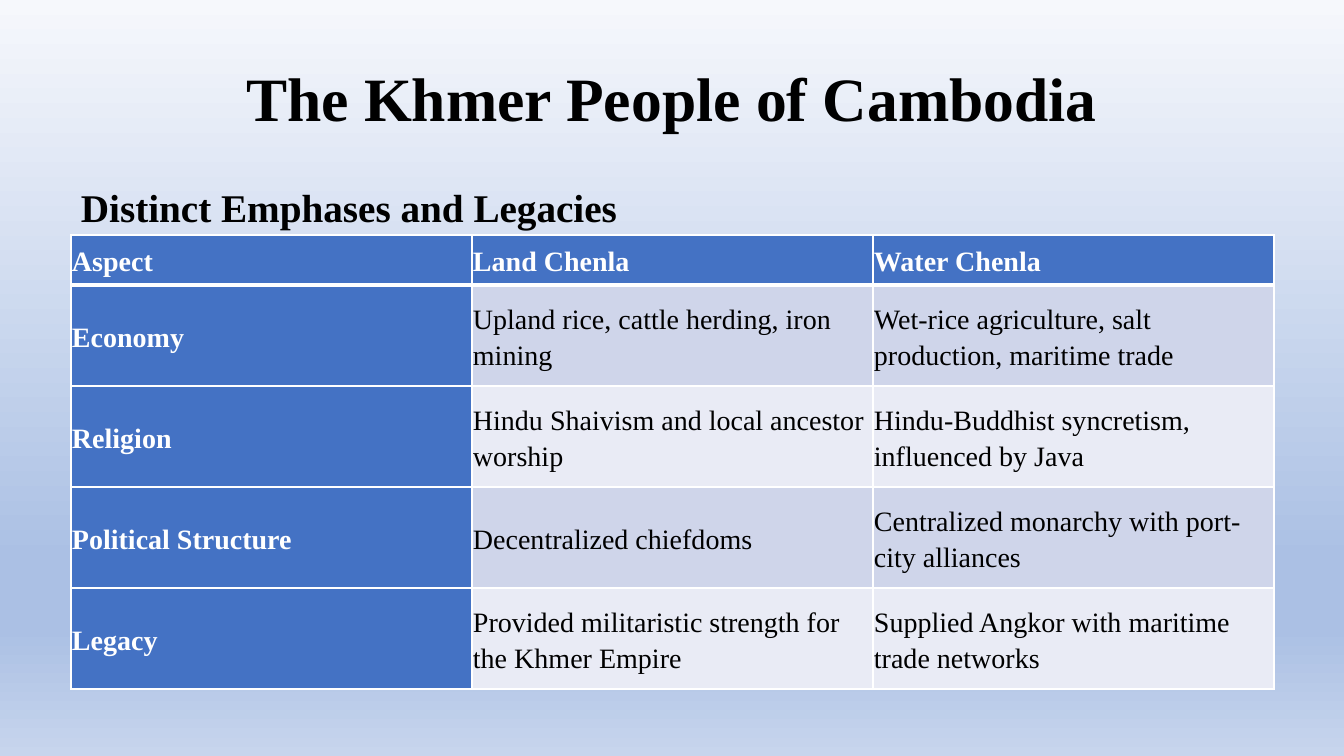
import pptx
import pptx.dml.color
import pptx.enum.text
import pptx.oxml
import pptx.oxml.ns
import pptx.util

RGBColor = pptx.dml.color.RGBColor
PP_ALIGN = pptx.enum.text.PP_ALIGN
MIDDLE = pptx.enum.text.MSO_ANCHOR.MIDDLE
AUTO_SIZE = pptx.enum.text.MSO_AUTO_SIZE

BLACK = RGBColor(0x00, 0x00, 0x00)
WHITE = RGBColor(0xFF, 0xFF, 0xFF)
BLUE = RGBColor(0x44, 0x72, 0xC4)
BANDS = [RGBColor(0xCF, 0xD5, 0xEA), RGBColor(0xE9, 0xEB, 0xF5)]
SKY = [
    (0, RGBColor(0xF6, 0xF8, 0xFC)),
    (74, RGBColor(0xAB, 0xC0, 0xE4)),
    (83, RGBColor(0xAB, 0xC0, 0xE4)),
    (100, RGBColor(0xC7, 0xD5, 0xED)),
]
PX = 914400 / 100.8
NS = pptx.oxml.ns.nsdecls("a")

ROWS = [
    ("Aspect", "Land Chenla", "Water Chenla"),
    ("Economy", "Upland rice, cattle herding, iron mining",
     "Wet-rice agriculture, salt production, maritime trade"),
    ("Religion", "Hindu Shaivism and local ancestor worship",
     "Hindu-Buddhist syncretism, influenced by Java"),
    ("Political Structure", "Decentralized chiefdoms",
     "Centralized monarchy with port-city alliances"),
    ("Legacy", "Provided militaristic strength for the Khmer Empire",
     "Supplied Angkor with maritime trade networks"),
]


def px(*lengths):
    return [pptx.util.Emu(round(n * PX)) for n in lengths]


def write(tf, text, size, color=BLACK, bold=True, align=PP_ALIGN.LEFT,
          line=None, after=None):
    p = tf.paragraphs[0]
    p.alignment = align
    p.line_spacing = line
    p.space_after = after
    r = p.add_run()
    r.text = text
    r.font.name = "Times New Roman"
    r.font.size = pptx.util.Pt(size)
    r.font.bold = bold
    r.font.color.rgb = color


prs = pptx.Presentation()
prs.slide_width, prs.slide_height = px(1344, 756)
s = prs.slides.add_slide(prs.slide_layouts[5])

# Background gradient, top to bottom
fill = s.background.fill
fill.gradient()
fill.gradient_angle = 270
stops = s.background._cSld.find(".//" + pptx.oxml.ns.qn("a:gsLst"))
for stop in list(stops):
    stops.remove(stop)
for percent, color in SKY:
    stops.append(pptx.oxml.parse_xml(
        f'<a:gs {NS} pos="{percent * 1000}"><a:srgbClr val="{color}"/></a:gs>'))

# Title
title = s.shapes.title
title.left, title.top, title.width, title.height = px(0, 0, 1344, 182)
tf = title.text_frame
tf.auto_size = AUTO_SIZE.NONE
tf.vertical_anchor = MIDDLE
write(tf, "The Khmer People of Cambodia", 44, align=PP_ALIGN.CENTER,
      line=1.15, after=pptx.util.Pt(8))

# Comparison table
frame = s.shapes.add_table(len(ROWS), 3, *px(71, 235, 1203, 454))
table = frame.table
table.first_col = True
for column in table.columns:
    column.width = px(401)[0]
for i, texts in enumerate(ROWS):
    table.rows[i].height = px(50 if i == 0 else 101)[0]
    for j, text in enumerate(texts):
        cell = table.cell(i, j)
        heading = i == 0 or j == 0
        cell.vertical_anchor = MIDDLE
        cell.margin_left = cell.margin_right = px(1)[0]
        cell.margin_top = cell.margin_bottom = px(1)[0]
        write(cell.text_frame, text, 20, color=WHITE if heading else BLACK,
              bold=heading, line=1.15, after=pptx.util.Pt(8))
        tc_pr = cell._tc.get_or_add_tcPr()
        for side in "LRTB":
            thick = (i, side) in [(0, "B"), (1, "T")]
            width = pptx.util.Pt(3 if thick else 1)
            tc_pr.append(pptx.oxml.parse_xml(
                f'<a:ln{side} {NS} w="{width}"><a:solidFill>'
                f'<a:srgbClr val="{WHITE}"/></a:solidFill></a:ln{side}>'))
        cell.fill.solid()
        cell.fill.fore_color.rgb = BLUE if heading else BANDS[(i - 1) % 2]

# Table heading
tf = s.shapes.add_textbox(*px(71, 178, 562, 57)).text_frame
tf.word_wrap = False
tf.auto_size = AUTO_SIZE.SHAPE_TO_FIT_TEXT
tf.vertical_anchor = MIDDLE
write(tf, "Distinct Emphases and Legacies", 28)

prs.save("out.pptx")
